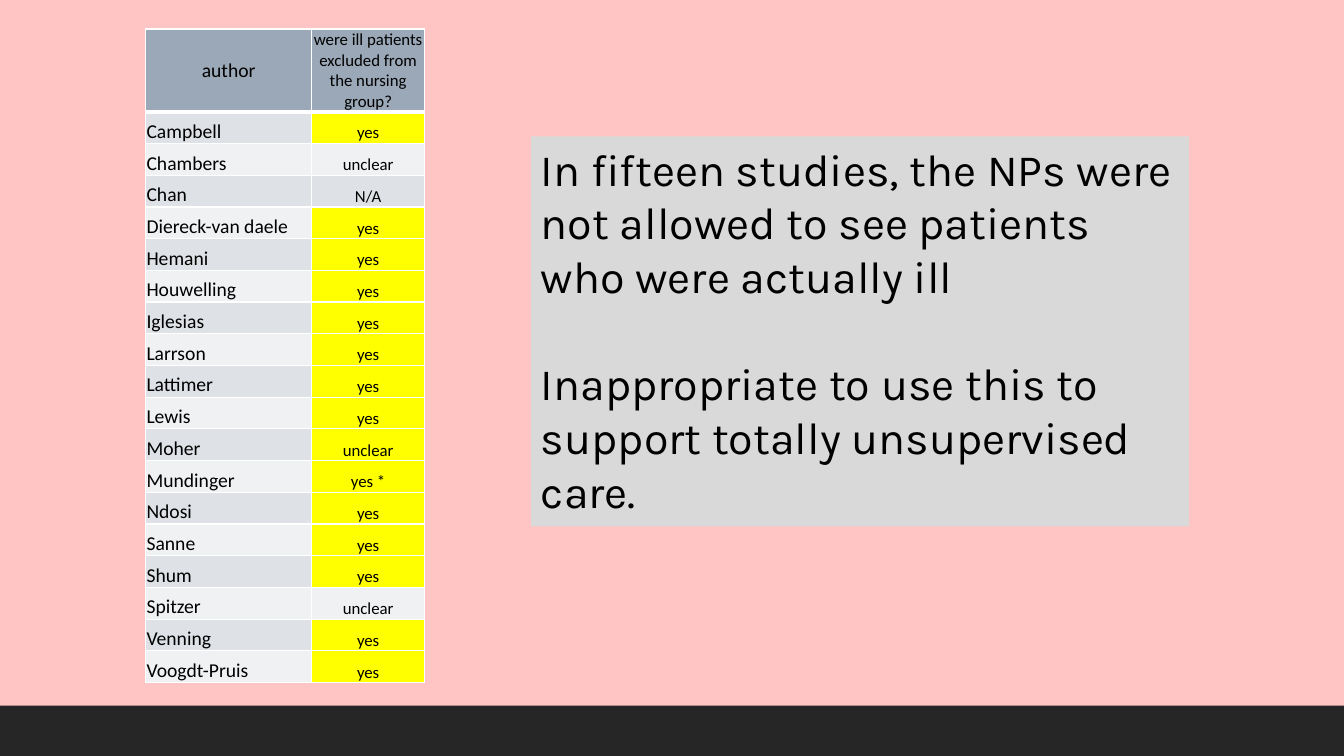
from dataclasses import dataclass

import lxml.etree
import pptx
import pptx.dml.color
import pptx.enum.shapes
import pptx.enum.text
import pptx.oxml.ns
import pptx.util

PX_PER_INCH = 108
ALIGN = pptx.enum.text.PP_ALIGN
ANCHOR = pptx.enum.text.MSO_ANCHOR


@dataclass(frozen=True)
class Theme:
    background: str = "FFC4C4"
    footer: str = "262626"
    panel: str = "D9D9D9"
    header: str = "9BA8B7"
    bands: tuple[str, str] = ("DEE1E6", "EFF1F3")
    highlight: str = "FFFF00"
    border: str = "FFFFFF"
    ink: str = "000000"
    table_font: str = "Calibri"
    panel_font: str = "Karla"
    author_size: int = 14
    answer_size: int = 12
    panel_size: int = 32
    panel_gap: int = 38
    border_width: int = 1
    header_rule: int = 3


@dataclass(frozen=True)
class Study:
    author: str
    answer: str = "yes"
    highlighted: bool = True


@dataclass(frozen=True)
class Box:
    left: int
    top: int
    width: int
    height: int


THEME = Theme()
SLIDE = Box(0, 0, 1440, 810)
FOOTER = Box(0, 756, 1440, 54)
PANEL = Box(569, 146, 705, 418)
TABLE = Box(156, 31, 299, 700)
COLUMN_WIDTHS = (178, 121)
HEADER_HEIGHT = 88
ROW_HEIGHT = 34

HEADINGS = ("author", "were ill patients excluded from the nursing group?")
STUDIES = (
    Study("Campbell"),
    Study("Chambers", "unclear", False),
    Study("Chan", "N/A", False),
    Study("Diereck-van daele"),
    Study("Hemani"),
    Study("Houwelling"),
    Study("Iglesias"),
    Study("Larrson"),
    Study("Lattimer"),
    Study("Lewis"),
    Study("Moher", "unclear"),
    Study("Mundinger", "yes *"),
    Study("Ndosi"),
    Study("Sanne"),
    Study("Shum"),
    Study("Spitzer", "unclear", False),
    Study("Venning"),
    Study("Voogdt-Pruis"),
)
CONCLUSIONS = (
    "In fifteen studies, the NPs were not allowed to see patients who were actually ill",
    "Inappropriate to use this to support totally unsupervised care.",
)


def px(length: int) -> int:
    return pptx.util.Emu(round(length * 914400 / PX_PER_INCH))


def place(box: Box) -> tuple[int, int, int, int]:
    return px(box.left), px(box.top), px(box.width), px(box.height)


def paint(fill, color: str) -> None:
    fill.solid()
    fill.fore_color.rgb = pptx.dml.color.RGBColor.from_string(color)


def write(para, text: str, *, font: str, size: int,
          align: ALIGN = ALIGN.LEFT, gap: int = 0) -> None:
    para.alignment = align
    para.space_before = pptx.util.Pt(gap)
    span = para.add_run()
    span.text = text
    span.font.name = font
    span.font.size = pptx.util.Pt(size)
    span.font.bold = False
    span.font.color.rgb = pptx.dml.color.RGBColor.from_string(THEME.ink)


def draw_borders(cell, top: int, bottom: int) -> None:
    side = THEME.border_width
    qn = pptx.oxml.ns.qn
    properties = cell._tc.get_or_add_tcPr()
    for tag, width in (("a:lnL", side), ("a:lnR", side), ("a:lnT", top), ("a:lnB", bottom)):
        line = lxml.etree.SubElement(properties, qn(tag), w=str(pptx.util.Pt(width)))
        solid = lxml.etree.SubElement(line, qn("a:solidFill"))
        lxml.etree.SubElement(solid, qn("a:srgbClr"), val=THEME.border)


def fill_cell(cell, text: str, color: str, *, size: int, align: ALIGN, anchor: ANCHOR,
              top: int = THEME.border_width, bottom: int = THEME.border_width) -> None:
    cell.margin_left = cell.margin_right = cell.margin_top = px(1)
    cell.margin_bottom = 0
    cell.vertical_anchor = anchor
    draw_borders(cell, top, bottom)
    paint(cell.fill, color)
    write(cell.text_frame.paragraphs[0], text,
          font=THEME.table_font, size=size, align=align)


def add_study_table(slide) -> None:
    table = slide.shapes.add_table(len(STUDIES) + 1, len(HEADINGS), *place(TABLE)).table
    table.first_row = table.horz_banding = False
    for column, width in zip(table.columns, COLUMN_WIDTHS):
        column.width = px(width)
    for index, row in enumerate(table.rows):
        row.height = px(ROW_HEIGHT if index else HEADER_HEIGHT)

    sizes = (THEME.author_size, THEME.answer_size)
    for column, (heading, size) in enumerate(zip(HEADINGS, sizes)):
        fill_cell(table.cell(0, column), heading, THEME.header, size=size,
                  align=ALIGN.CENTER, anchor=ANCHOR.MIDDLE, bottom=THEME.header_rule)

    for index, study in enumerate(STUDIES):
        band = THEME.bands[index % 2]
        top = THEME.border_width if index else THEME.header_rule
        fill_cell(table.cell(index + 1, 0), study.author, band, size=THEME.author_size,
                  align=ALIGN.LEFT, anchor=ANCHOR.BOTTOM, top=top)
        fill_cell(table.cell(index + 1, 1), study.answer,
                  THEME.highlight if study.highlighted else band, size=THEME.answer_size,
                  align=ALIGN.CENTER, anchor=ANCHOR.BOTTOM, top=top)


def add_footer(slide) -> None:
    bar = slide.shapes.add_shape(pptx.enum.shapes.MSO_SHAPE.RECTANGLE, *place(FOOTER))
    bar.shadow.inherit = False
    paint(bar.fill, THEME.footer)
    bar.line.fill.background()


def add_conclusions(slide) -> None:
    panel = slide.shapes.add_textbox(*place(PANEL))
    paint(panel.fill, THEME.panel)
    frame = panel.text_frame
    frame.word_wrap = True
    frame.auto_size = pptx.enum.text.MSO_AUTO_SIZE.SHAPE_TO_FIT_TEXT
    for index, text in enumerate(CONCLUSIONS):
        para = frame.add_paragraph() if index else frame.paragraphs[0]
        write(para, text, font=THEME.panel_font, size=THEME.panel_size,
              gap=THEME.panel_gap if index else 0)


def main() -> None:
    deck = pptx.Presentation()
    deck.slide_width, deck.slide_height = px(SLIDE.width), px(SLIDE.height)
    slide = deck.slides.add_slide(deck.slide_layouts[6])
    paint(slide.background.fill, THEME.background)
    add_footer(slide)
    add_study_table(slide)
    add_conclusions(slide)
    deck.save("out.pptx")


if __name__ == "__main__":
    main()
